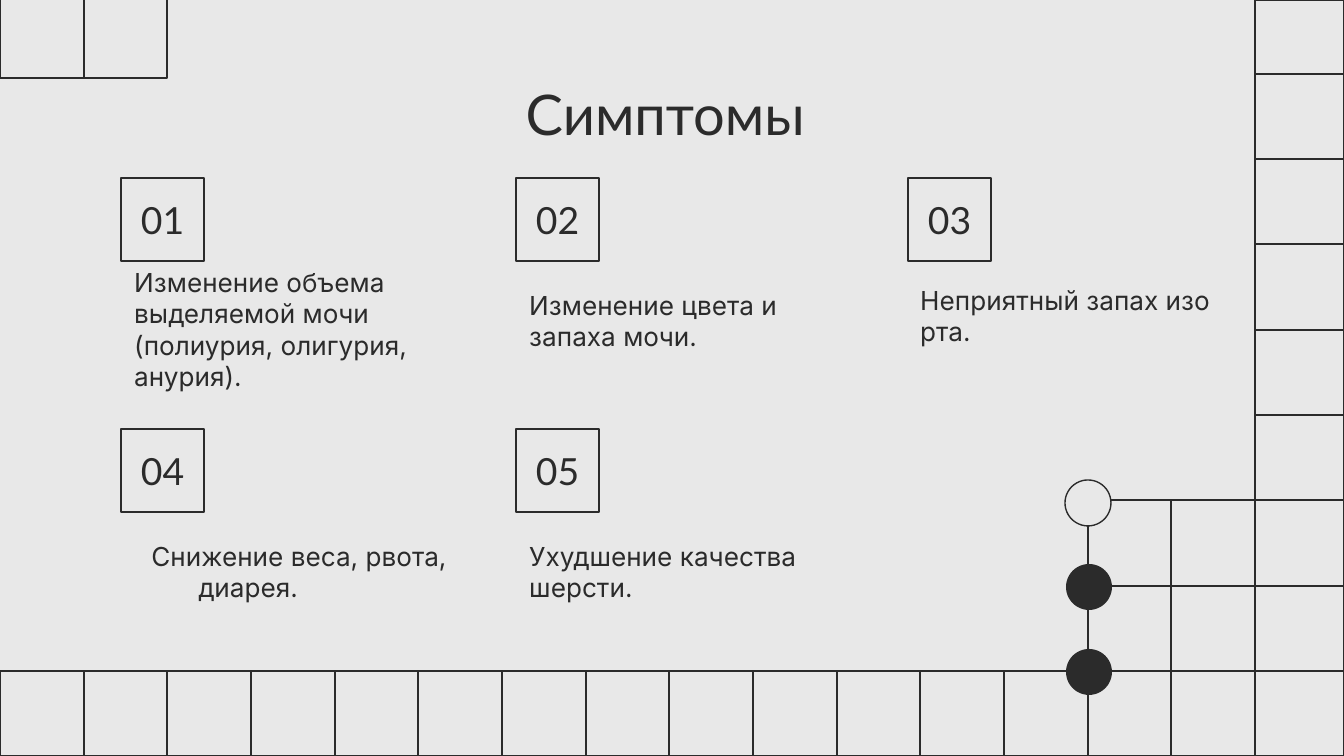
from pptx import Presentation
from pptx import util as u
from pptx.dml.color import RGBColor
from pptx.enum import shapes, text

PX = 914400 / 134.4
INK, PAPER = "2B2B2B", "E8E8E8"
RECT, OVAL = shapes.MSO_SHAPE.RECTANGLE, shapes.MSO_SHAPE.OVAL
TOP, MID = text.MSO_ANCHOR.TOP, text.MSO_ANCHOR.MIDDLE
LEFT, MIDST = text.PP_ALIGN.LEFT, text.PP_ALIGN.CENTER


def draw(kind, *box, fill=None, line=INK):
    """Add a flat shape at a box given in px; None leaves out fill or line."""
    shape = slide.shapes.add_shape(kind, *[round(n * PX) for n in box])
    shape.shadow.inherit = False
    for part, tint in ((shape.fill, fill), (shape.line.fill, line)):
        if tint:
            part.solid()
            part.fore_color.rgb = RGBColor.from_string(tint)
        else:
            part.background()
    if line:
        shape.line.width = u.Pt(0.75)
    return shape


def write(shape, words, size, face, align, anchor):
    frame = shape.text_frame
    frame.text = words
    look = {"word_wrap": True, "auto_size": text.MSO_AUTO_SIZE.NONE,
            "vertical_anchor": anchor}
    for side in ("left", "top", "right", "bottom"):
        look["margin_" + side] = u.Inches(0.1)
    for key, val in look.items():
        setattr(frame, key, val)
    para = frame.paragraphs[0]
    para.alignment = align
    font = para.runs[0].font
    for key, val in {"size": u.Pt(size), "name": face, "bold": False}.items():
        setattr(font, key, val)
    font.color.rgb = RGBColor.from_string(INK)
    return para


deck = Presentation()
deck.slide_width, deck.slide_height = round(1344 * PX), round(756 * PX)
slide = deck.slides.add_slide(deck.slide_layouts[5])
back = slide.background.fill
back.solid()
back.fore_color.rgb = RGBColor.from_string(PAPER)

# Grid frame: bottom row, right column, inner corner and top left pair
cols = [round(i * 1255 / 15) for i in range(16)] + [1344]
rows = [0] + [round(74 + i * 682 / 8) for i in range(9)]
cells = [(c, 8) for c in range(16)]
cells += [(15, r) for r in range(8)]
cells += [(c, r) for c in (13, 14) for r in (6, 7)]
for c, r in cells:
    draw(RECT, cols[c], rows[r], cols[c + 1] - cols[c], rows[r + 1] - rows[r])
for c in (0, 1):
    draw(RECT, cols[c], -1, cols[c + 1] - cols[c], 79)

# Dots on the grid
draw(OVAL, 1065, 480, 46, 46, fill=PAPER)
for y in (564, 649):
    draw(OVAL, 1066, y, 46, 46, fill=INK, line=None)

# Title; its closing space shifts the centred word slightly left
title = slide.shapes.title
place = {"left": 106, "top": 66, "width": 1133, "height": 85}
for key, val in place.items():
    setattr(title, key, round(val * PX))
write(title, "Симптомы ", 30, "Lato", MIDST, TOP)

# Symptoms: number box x, y, then text x, y
items = [
    (121, 178, 121, 253, "Изменение объема выделяемой мочи (полиурия, олигурия, анурия)."),
    (516, 178, 516, 276, "Изменение цвета и запаха мочи."),
    (908, 178, 907, 271, "Неприятный запах изо рта."),
    (121, 429, 118, 527, "Снижение веса, рвота, диарея."),
    (516, 429, 516, 527, "Ухудшение качества шерсти."),
]
for num, (x, y, left, top, words) in enumerate(items, 1):
    write(draw(RECT, x, y, 83, 83), f"{num:02}", 20, "Lato", MIDST, MID)
    box = slide.shapes.add_textbox(*[round(n * PX) for n in (left, top, 344, 85)])
    para = write(box, words, 14, "Inter", LEFT, TOP)
    if num == 4:
        props = para._p.get_or_add_pPr()
        props.set("marL", str(u.Inches(0.5)))
        props.set("indent", str(u.Inches(-0.35)))

deck.save("out.pptx")
